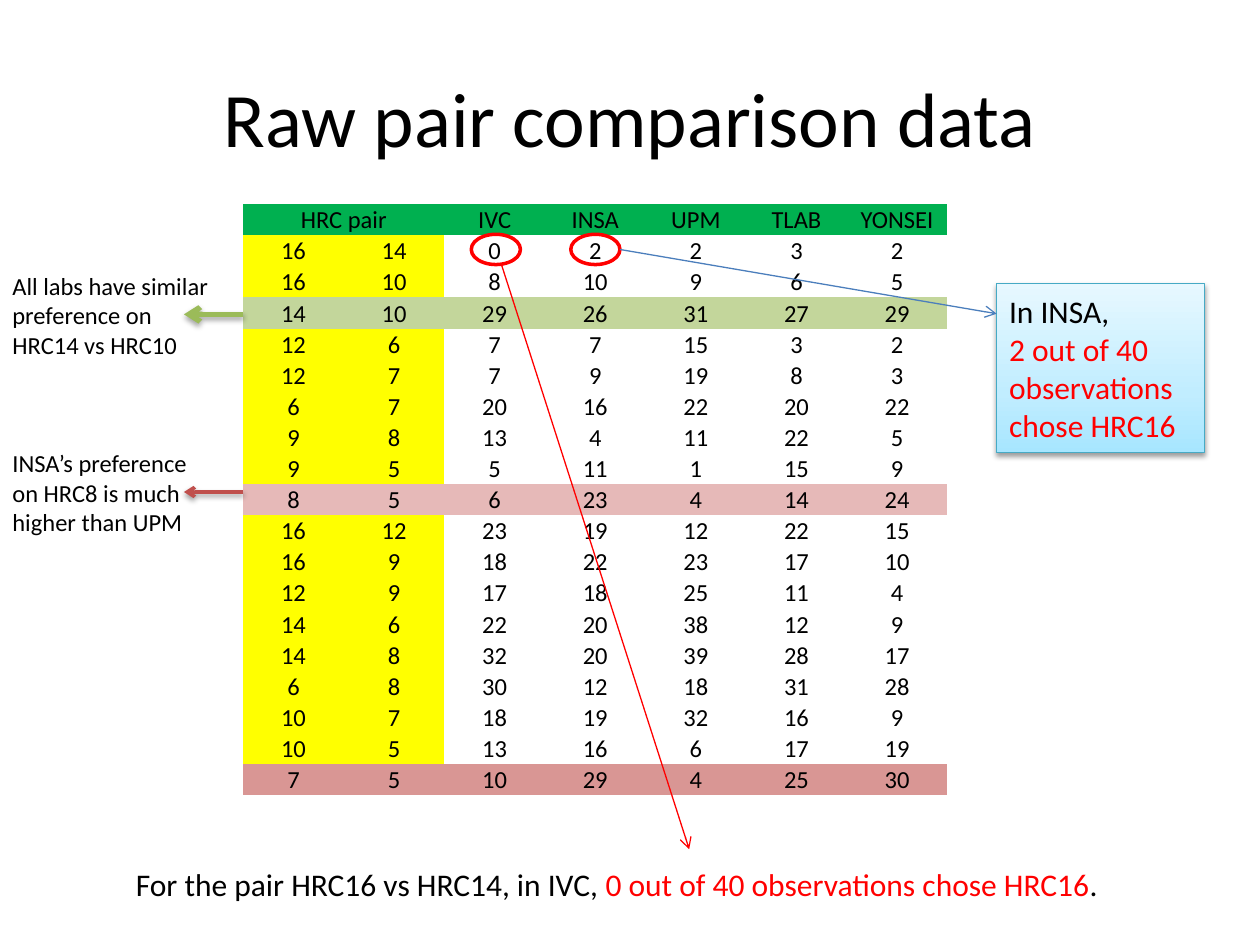
import copy

from lxml import etree
from pptx import Presentation
from pptx import util as u
from pptx.dml.color import RGBColor
from pptx.enum import shapes, text
from pptx.oxml import ns

FONT = "Calibri"
NO_GRID_STYLE = "{2D5ABB26-0587-4C30-8999-92F81FD0307C}"
COLORS = {
    "ink": "000000", "alert": "FF0000", "header": "00B050", "pair": "FFFF00",
    "agree": "C3D69B", "differ": "E6B9B8", "differ_most": "D99694",
    "agree_arrow": "9BBB59", "differ_arrow": "C0504D", "pointer": "4B7EBC",
    "callout_line": "46AAC5", "callout_low": "A7E6FF",
    "callout_mid": "C1EDFF", "callout_high": "E7F8FF",
}
LABS = ["IVC", "INSA", "UPM", "TLAB", "YONSEI"]
RESULTS = [
    (16, 14, 0, 2, 2, 3, 2), (16, 10, 8, 10, 9, 6, 5),
    (14, 10, 29, 26, 31, 27, 29), (12, 6, 7, 7, 15, 3, 2),
    (12, 7, 7, 9, 19, 8, 3), (6, 7, 20, 16, 22, 20, 22),
    (9, 8, 13, 4, 11, 22, 5), (9, 5, 5, 11, 1, 15, 9),
    (8, 5, 6, 23, 4, 14, 24), (16, 12, 23, 19, 12, 22, 15),
    (16, 9, 18, 22, 23, 17, 10), (12, 9, 17, 18, 25, 11, 4),
    (14, 6, 22, 20, 38, 12, 9), (14, 8, 32, 20, 39, 28, 17),
    (6, 8, 30, 12, 18, 31, 28), (10, 7, 18, 19, 32, 16, 9),
    (10, 5, 13, 16, 6, 17, 19), (7, 5, 10, 29, 4, 25, 30),
]
HIGHLIGHTS = {(14, 10): "agree", (8, 5): "differ", (7, 5): "differ_most"}


def rgb(name):
    return RGBColor.from_string(COLORS[name])


def inches(box):
    return [u.Inches(length) for length in box]


def style(font, size, color="ink"):
    font.name = FONT
    font.size = u.Pt(size)
    font.color.rgb = rgb(color)


def add_shadow(effects, opacity, distance):
    shadow = etree.SubElement(effects, ns.qn("a:outerShdw"), blurRad=str(u.Pt(3.1)),
                              dist=str(u.Pt(distance)), dir="5400000", rotWithShape="0")
    black = etree.SubElement(shadow, ns.qn("a:srgbClr"), val=COLORS["ink"])
    etree.SubElement(black, ns.qn("a:alpha"), val=str(opacity * 1000))


def add_arrow(slide, start, end, color, width, shadow=None):
    arrow = slide.shapes.add_connector(shapes.MSO_CONNECTOR.STRAIGHT, *inches(start + end))
    arrow.line.color.rgb = rgb(color)
    arrow.line.width = u.Pt(width)
    properties = arrow._element.spPr
    etree.SubElement(properties.find(ns.qn("a:ln")), ns.qn("a:tailEnd"), type="arrow")
    effects = etree.SubElement(properties, ns.qn("a:effectLst"))
    if shadow:
        add_shadow(effects, *shadow)


def add_title(slide, box):
    title = slide.shapes.title
    title.left, title.top, title.width, title.height = inches(box)
    title.text_frame.text = "Raw pair comparison data"
    title.text_frame.vertical_anchor = text.MSO_ANCHOR.MIDDLE
    heading = title.text_frame.paragraphs[0]
    heading.alignment = text.PP_ALIGN.CENTER
    style(heading.font, 44)


def fill_cell(cell, value, color):
    cell.margin_left = cell.margin_right = cell.margin_top = u.Inches(0.01)
    cell.margin_bottom = 0
    cell.vertical_anchor = text.MSO_ANCHOR.MIDDLE
    if color:
        cell.fill.solid()
        cell.fill.fore_color.rgb = rgb(color)
    else:
        cell.fill.background()
    cell.text = str(value)
    entry = cell.text_frame.paragraphs[0]
    entry.alignment = text.PP_ALIGN.CENTER
    style(entry.font, 14)


def add_results(slide, box):
    header = ["HRC pair", ""] + LABS
    frame = slide.shapes.add_table(len(RESULTS) + 1, len(header), *inches(box))
    frame._element.find(".//" + ns.qn("a:tableStyleId")).text = NO_GRID_STYLE
    table = frame.table
    table.first_row = table.horz_banding = False
    for row in table.rows:
        row.height = u.Inches(0.23)
    for column, label in enumerate(header):
        fill_cell(table.cell(0, column), label, "header")
    table.cell(0, 0).merge(table.cell(0, 1))
    for row, result in enumerate(RESULTS, start=1):
        highlight = HIGHLIGHTS.get(result[:2])
        for column, count in enumerate(result):
            color = highlight or ("pair" if column < 2 else None)
            fill_cell(table.cell(row, column), count, color)


def add_conclusion(slide, box):
    conclusion = slide.shapes.add_textbox(*inches(box)).text_frame
    conclusion.word_wrap = False
    sentence = conclusion.paragraphs[0]
    for words, color in [("For the pair HRC16 vs HRC14, in IVC, ", "ink"),
                         ("0 out of 40 observations chose HRC16", "alert"),
                         (".", "ink")]:
        part = sentence.add_run()
        part.text = words
        style(part.font, 18, color)


def add_ring(slide, box):
    ring = slide.shapes.add_shape(shapes.MSO_SHAPE.OVAL, *inches(box))
    ring.shadow.inherit = False
    ring.fill.background()
    ring.line.color.rgb = rgb("alert")
    ring.line.width = u.Pt(2)


def add_callout(slide, box):
    callout = slide.shapes.add_shape(shapes.MSO_SHAPE.RECTANGLE, *inches(box))
    callout.fill.gradient()
    callout.fill.gradient_angle = 90
    stops = callout._element.spPr.find(".//" + ns.qn("a:gsLst"))
    stops.insert(1, copy.deepcopy(stops[0]))
    shades = [(0, "callout_low"), (0.35, "callout_mid"), (1, "callout_high")]
    for stop, (position, color) in zip(callout.fill.gradient_stops, shades):
        stop.position = position
        stop.color.rgb = rgb(color)
    callout.line.color.rgb = rgb("callout_line")
    callout.line.width = u.Pt(0.75)
    callout.shadow.inherit = False
    add_shadow(callout._element.spPr.find(ns.qn("a:effectLst")), 38, 1.6)
    message = callout.text_frame
    message.word_wrap = True
    message.vertical_anchor = text.MSO_ANCHOR.MIDDLE
    message.text = "In INSA,\n2 out of 40 observations chose HRC16"
    for line, color in zip(message.paragraphs, ["ink", "alert"]):
        line.alignment = text.PP_ALIGN.LEFT
        style(line.font, 18, color)


def add_remark(slide, box, words, color, width, shadow):
    left, top, box_width, height = box
    remark = slide.shapes.add_textbox(*inches(box)).text_frame
    remark.word_wrap = True
    remark.text = words
    style(remark.paragraphs[0].font, 14)
    arrow_y = top + 0.395
    right = left + box_width
    add_arrow(slide, (right + 0.16, arrow_y), (right - 0.31, arrow_y), color, width, shadow)


def main():
    deck = Presentation()
    deck.slide_width, deck.slide_height = u.Inches(10), u.Inches(7.5)
    slide = deck.slides.add_slide(deck.slide_layouts[5])
    add_title(slide, (0.5, 0.3, 9, 1.25))
    add_results(slide, (1.93, 1.62, 5.59, 4.63))
    add_conclusion(slide, (0.98, 6.82, 7.98, 0.4))
    add_ring(slide, (3.74, 1.86, 0.39, 0.24))
    add_arrow(slide, (3.98, 2.1), (5.47, 6.74), "alert", 0.75)
    add_ring(slide, (4.53, 1.86, 0.39, 0.24))
    add_callout(slide, (7.91, 2.25, 1.65, 1.34))
    add_arrow(slide, (4.92, 1.98), (7.91, 2.49), "pointer", 0.75)
    add_remark(slide, (0, 3.51, 1.77, 0.81),
               "INSA’s preference on HRC8 is much higher than UPM", "differ_arrow", 2, (38, 1.6))
    add_remark(slide, (0, 2.1, 1.77, 0.81),
               "All labs have similar preference on HRC14 vs HRC10", "agree_arrow", 3, (35, 1.8))
    deck.save("out.pptx")


if __name__ == "__main__":
    main()
